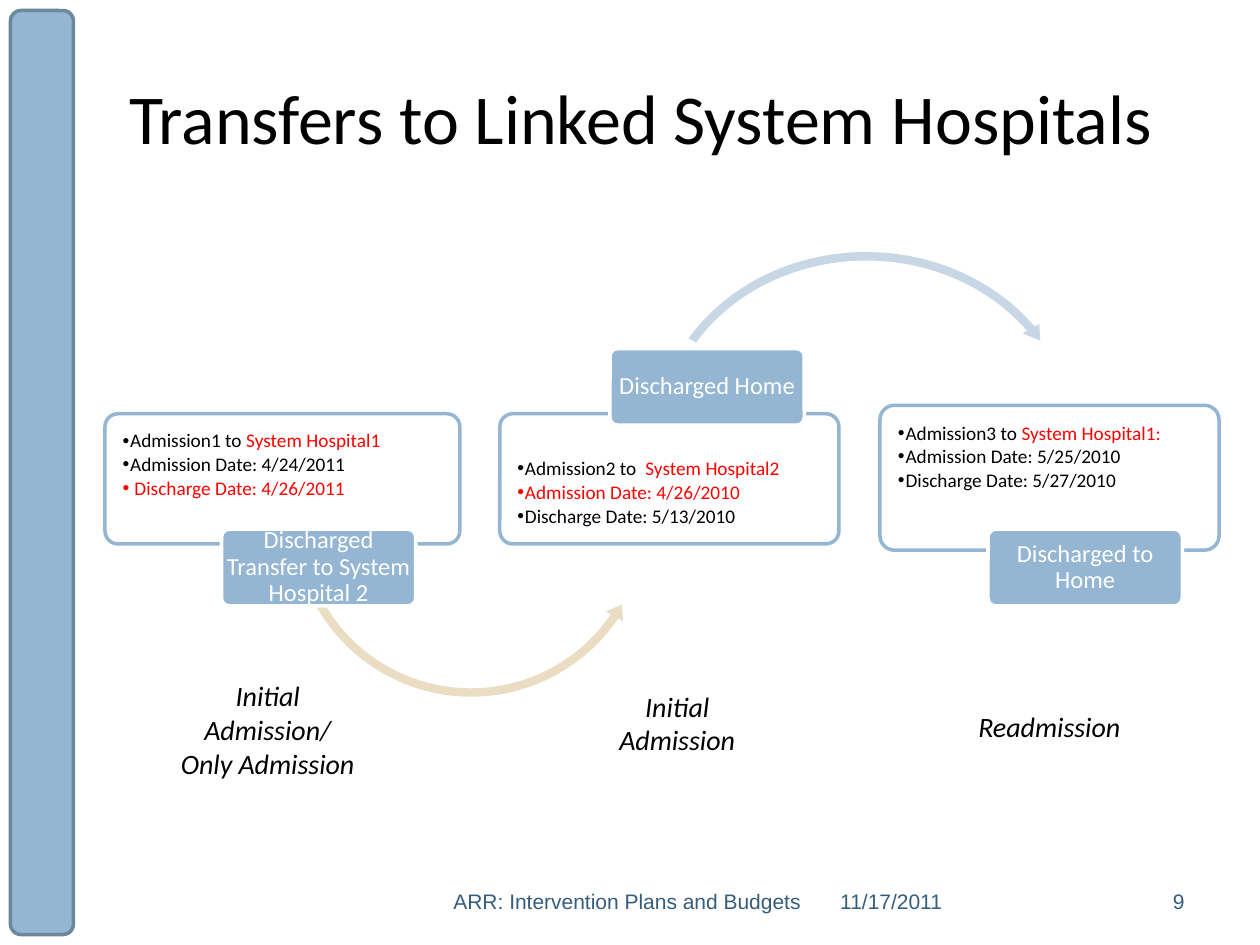
from lxml import etree
from pptx import Presentation
from pptx.dml.color import RGBColor as RGB
from pptx.enum.shapes import MSO_SHAPE as SHAPE
from pptx.enum.text import MSO_ANCHOR as ANCHOR, PP_ALIGN as ALIGN
from pptx.oxml.ns import qn
from pptx.util import Inches, Pt

COLORS = {
    "blue": "94B6D2", "edge": "6D879B", "footer": "355D7E", "white": "FFFFFF",
    "black": "000000", "red": "FF0000", "sand": "EBDDC3", "pale": "C8D7E5",
}

prs = Presentation()
prs.slide_width, prs.slide_height = Inches(10), Inches(7.5)
COL, ROW = prs.slide_width / 120, prs.slide_height / 90
slide = prs.slides.add_slide(prs.slide_layouts[6])


def add_box(kind, at, fill=None, line=None, adj=()):
    x, y, w, h = at
    place = int(x * COL), int(y * ROW), int(w * COL), int(h * ROW)
    if kind is None:
        sp = slide.shapes.add_textbox(*place)
    else:
        sp = slide.shapes.add_shape(kind, *place)
        sp.shadow.inherit = False
        sp.fill.solid()
        sp.fill.fore_color.rgb = RGB.from_string(COLORS[fill])
        if line:
            sp.line.color.rgb = RGB.from_string(COLORS[line])
            sp.line.width = Pt(2)
        else:
            sp.line.fill.background()
        for i, value in enumerate(adj):
            sp.adjustments[i] = value
    sp.text_frame.word_wrap = True
    return sp


def add_text(p, runs, size, font="Calibri", align=ALIGN.LEFT, italic=False):
    p.alignment = align
    for text, color in runs:
        r = p.add_run()
        r.text = text
        r.font.size = Pt(size)
        r.font.name = font
        r.font.italic = italic
        r.font.color.rgb = RGB.from_string(COLORS[color])


add_box(SHAPE.ROUNDED_RECTANGLE, (1, 1, 6, 88), "blue", "edge")

footer = add_box(None, (42, 84, 55, 3.6)).text_frame.paragraphs[0]
tabs = etree.SubElement(footer._p.get_or_add_pPr(), qn("a:tabLst"))
etree.SubElement(tabs, qn("a:tab"), pos=str(Inches(3.07)), algn="l")
add_text(footer, [("ARR: Intervention Plans and Budgets\t11/17/2011", "footer")], 12, "Arial")

number = add_box(None, (106, 84, 8, 3.6)).text_frame.paragraphs[0]
add_text(number, [("9", "footer")], 12, "Arial", ALIGN.RIGHT)

title = add_box(None, (8, 3.6, 106, 15)).text_frame
title.vertical_anchor = ANCHOR.MIDDLE
add_text(title.paragraphs[0], [("Transfers to Linked System Hospitals", "black")], 40, align=ALIGN.CENTER)

cards = [
    ((10, 39.4, 33.8, 12.4), 0.11, [
        [("Admission1 to ", "black"), ("System Hospital1", "red")],
        [("Admission Date: 4/24/2011", "black")],
        [(" Discharge Date: 4/26/2011", "red")],
    ]),
    ((47.6, 39.4, 32.3, 12.4), 0.33, [
        [("Admission2 to  ", "black"), ("System Hospital2", "red")],
        [("Admission Date: 4/26/2010", "red")],
        [("Discharge Date: 5/13/2010", "black")],
    ]),
    ((83.8, 38.6, 32.3, 13.8), 0.11, [
        [("Admission3 to ", "black"), ("System Hospital1:", "red")],
        [("Admission Date: 5/25/2010", "black")],
        [("Discharge Date: 5/27/2010", "black")],
    ]),
]
for at, top, lines in cards:
    tf = add_box(SHAPE.ROUNDED_RECTANGLE, at, "white", "blue", [0.1]).text_frame
    tf.vertical_anchor = ANCHOR.TOP
    tf.margin_left = tf.margin_right = Inches(0.11)
    tf.margin_top, tf.margin_bottom = Inches(top), 0
    for i, runs in enumerate(lines):
        p = tf.add_paragraph() if i else tf.paragraphs[0]
        p.line_spacing = 0.9
        p.space_after = Pt(1.65)
        pPr = p._p.get_or_add_pPr()
        pPr.set("marL", str(Inches(0.06)))
        pPr.set("indent", str(-Inches(0.06)))
        etree.SubElement(pPr, qn("a:buFont"), typeface="Arial")
        etree.SubElement(pPr, qn("a:buChar"), char="•")
        add_text(p, runs, 11)

arrows = [
    (SHAPE.LEFT_CIRCULAR_ARROW, (27.4, 32, 34.9, 34.9), "sand", [0.023, 2.739, 20.454, 90.204, 0.027]),
    (SHAPE.CIRCULAR_ARROW, (61.9, 23.5, 41.2, 36.7), "pale", [0.022, 2.605, 195.667, 125.782, 0.025]),
]
for kind, at, fill, adj in arrows:
    add_box(kind, at, fill, adj=adj)

labels = [
    (21.1, 50.4, "Discharged Transfer to System Hospital 2"),
    (58.1, 33.2, "Discharged Home"),
    (94.1, 50.4, "Discharged to Home"),
]
for x, y, text in labels:
    tf = add_box(SHAPE.ROUNDED_RECTANGLE, (x, y, 18.5, 7.3), "blue", "white", [0.1]).text_frame
    tf.vertical_anchor = ANCHOR.MIDDLE
    tf.margin_left = tf.margin_right = Inches(0.01)
    tf.margin_top = tf.margin_bottom = 0
    tf.paragraphs[0].line_spacing = 0.9
    add_text(tf.paragraphs[0], [(text, "white")], 14, align=ALIGN.CENTER)

captions = [
    (16, 64, 10.9, ALIGN.CENTER, ["Initial Admission/", "Only Admission"]),
    (55, 65, 7.7, ALIGN.CENTER, ["Initial Admission"]),
    (92, 67, 4.4, ALIGN.LEFT, ["Readmission"]),
]
for x, y, h, align, lines in captions:
    tf = add_box(None, (x, y, 19, h)).text_frame
    tf.vertical_anchor = ANCHOR.MIDDLE
    for i, text in enumerate(lines):
        p = tf.add_paragraph() if i else tf.paragraphs[0]
        add_text(p, [(text, "black")], 16, align=align, italic=True)

prs.save("out.pptx")
